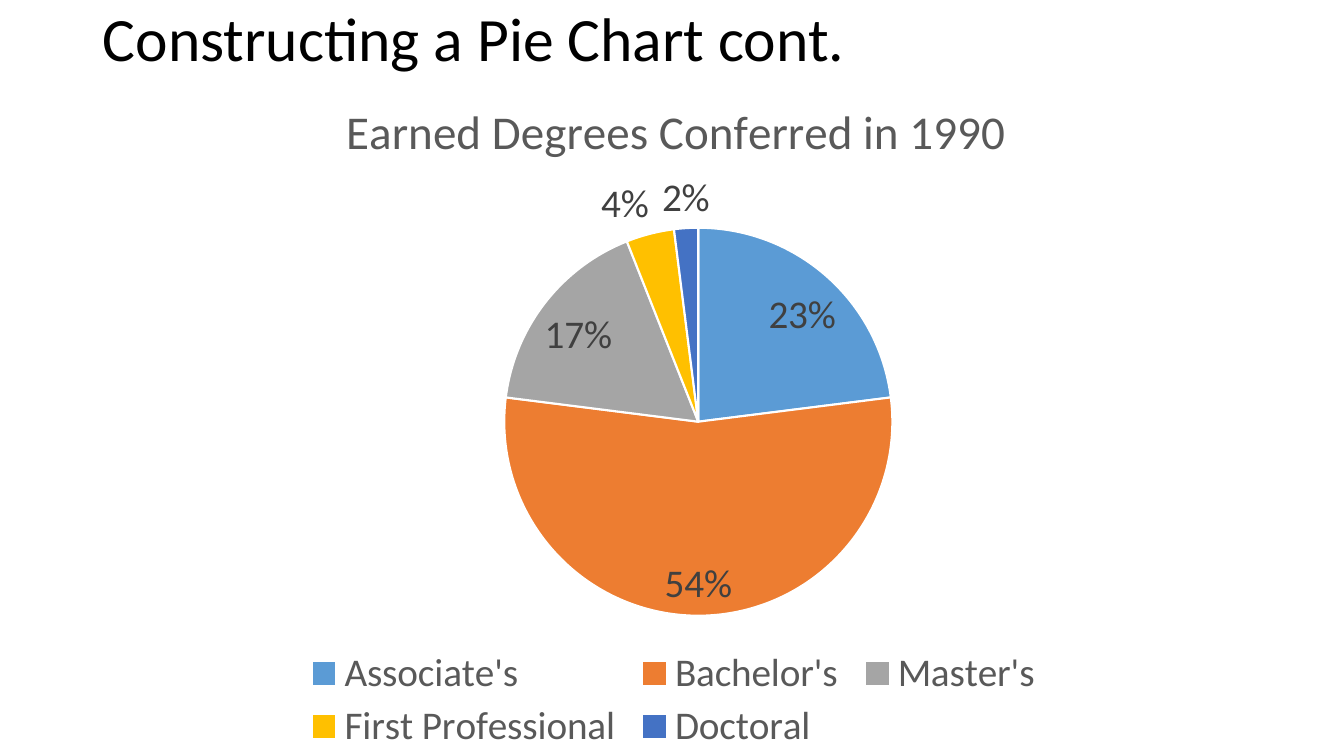
from lxml.etree import SubElement as Sub
from pptx import Presentation
from pptx.chart.data import CategoryChartData as Data
from pptx.dml.color import RGBColor as Rgb
from pptx.enum.chart import XL_CHART_TYPE as Kind
from pptx.enum.chart import XL_LABEL_POSITION as Spot
from pptx.enum.chart import XL_LEGEND_POSITION as Side
from pptx.enum.text import MSO_ANCHOR as Anchor
from pptx.enum.text import MSO_AUTO_SIZE as Fit
from pptx.enum.text import PP_ALIGN as Align
from pptx.oxml.ns import qn
from pptx.util import Inches, Pt

FONT = "Calibri"
COLORS = {"title": "000000", "text": "595959", "label": "404040", "edge": "FFFFFF"}
# Degree: share, slice colour
DEGREES = {
    "Associate's": (0.23, "5B9BD5"),
    "Bachelor's": (0.54, "ED7D31"),
    "Master's": (0.17, "A5A5A5"),
    "First Professional": (0.04, "FFC000"),
    "Doctoral": (0.02, "4472C4"),
}


def style(font, size, color):
    font.name = FONT
    font.size = Pt(size)
    font.bold = False
    font.color.rgb = Rgb.from_string(COLORS[color])


def place(part, inner=False, **box):
    """Set the layout of a chart part in shares of the chart's size."""
    layout = part.find(qn("c:layout"))
    if layout is None:
        layout = part.makeelement(qn("c:layout"))
        # The layout follows the title text or the legend position
        head = part.find(qn("c:tx"))
        if head is None:
            head = part.find(qn("c:legendPos"))
        if head is None:
            part.insert(0, layout)
        else:
            head.addnext(layout)
    for old in list(layout):
        layout.remove(old)
    manual = Sub(layout, qn("c:manualLayout"))
    if inner:
        Sub(manual, qn("c:layoutTarget")).set("val", "inner")
    for axis in "xy":
        Sub(manual, qn(f"c:{axis}Mode")).set("val", "edge")
    for key, share in box.items():
        Sub(manual, qn(f"c:{key}")).set("val", str(share))


def add_title(slide, text):
    title = slide.shapes.title
    title.left, title.top = Inches(0.92), Inches(0)
    title.width, title.height = Inches(11.5), Inches(0.83)
    frame = title.text_frame
    frame.text = text
    frame.auto_size = Fit.NONE
    frame.word_wrap = True
    frame.vertical_anchor = Anchor.MIDDLE
    line = frame.paragraphs[0]
    line.alignment = Align.LEFT
    line.line_spacing = 0.9
    style(line.runs[0].font, 44, "title")


def add_pie(slide, text):
    data = Data(number_format="0%")
    data.categories = list(DEGREES)
    data.add_series("Series 1", [share for share, _ in DEGREES.values()])
    chart = slide.shapes.add_chart(
        Kind.PIE, Inches(0.02), Inches(0.55), Inches(13.32), Inches(6.95), data
    ).chart
    style(chart.font, 28, "title")

    # Chart title
    chart.has_title = True
    head = chart.chart_title
    head.include_in_layout = False
    head.text_frame.text = text
    style(head.text_frame.paragraphs[0].runs[0].font, 33.6, "text")
    place(head._element, x=0.25, y=0.05)

    # Slices
    plot = chart.plots[0]
    plot.vary_by_categories = True
    for i, (_, color) in enumerate(DEGREES.values()):
        form = plot.series[0].points[i].format
        form.fill.solid()
        form.fill.fore_color.rgb = Rgb.from_string(color)
        form.line.color.rgb = Rgb.from_string(COLORS["edge"])
        form.line.width = Pt(1.5)
    place(plot._element.getparent(), True, x=0.374, y=0.246, w=0.289, h=0.554)

    # Value labels
    plot.has_data_labels = True
    labels = plot.data_labels
    labels.show_value = True
    labels.show_percentage = False
    labels.number_format = "0%"
    labels.number_format_is_linked = False
    labels.position = Spot.BEST_FIT
    style(labels.font, 28, "label")

    # Legend
    chart.has_legend = True
    legend = chart.legend
    legend.position = Side.BOTTOM
    legend.include_in_layout = False
    style(legend.font, 28, "text")
    place(legend._element, x=0.22, y=0.84, w=0.56, h=0.16)


def main():
    deck = Presentation()
    deck.slide_width, deck.slide_height = Inches(13.33), Inches(7.5)
    slide = deck.slides.add_slide(deck.slide_layouts[5])
    add_title(slide, "Constructing a Pie Chart cont.")
    add_pie(slide, "Earned Degrees Conferred in 1990")
    deck.save("out.pptx")


if __name__ == "__main__":
    main()
